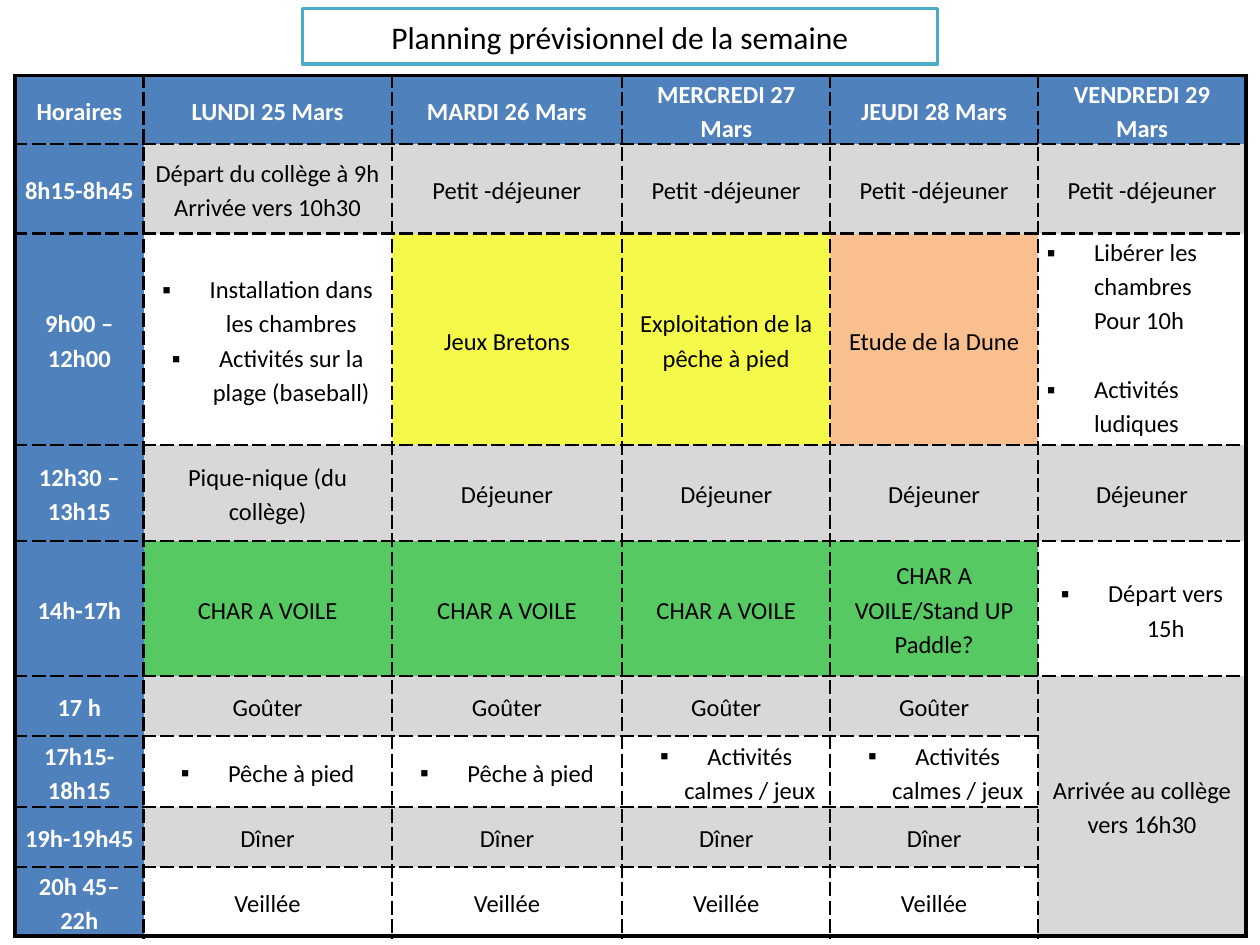
from lxml.etree import SubElement
from pptx import Presentation
from pptx.dml.color import RGBColor
from pptx.enum.text import MSO_ANCHOR as Anchor, PP_ALIGN as Align
from pptx.oxml.ns import qn
from pptx.util import Pt

COLORS = {
    "blue": "4F81BD", "grey": "D8D8D8", "yellow": "F5F949", "orange": "FABF8F",
    "green": "57C962", "teal": "4BACC6", "white": "FFFFFF", "black": "000000",
}
FONT = "Calibri"
TITLE_BOX = (172.8, 5, 362.9, 31.7)
PLANNING_BOX = (8.64, 43.2, 703.4, 491.8)
COLUMN_WIDTHS = [73.4, 141.8, 131.8] + [118.8] * 3
LINE = 19.5  # height of one line of text in a cell
HANGING = 27

DAYS = ["Horaires", "LUNDI 25 Mars", "MARDI 26 Mars", "MERCREDI 27 Mars",
        "JEUDI 28 Mars", "VENDREDI 29 Mars"]
# Each slot: height, hours, day entries, day fills; an entry in a list is bulleted
SLOTS = [
    (51.1, "8h15-8h45",
     ["Départ du collège à 9h\nArrivée vers 10h30"] + ["Petit -déjeuner"] * 4,
     ["grey"] * 5),
    (121, "9h00 – 12h00",
     [["Installation dans les chambres", "Activités sur la plage (baseball)"],
      "Jeux Bretons", "Exploitation de la pêche à pied", "Etude de la Dune",
      ["Libérer les chambres\vPour 10h", "Activités ludiques"]],
     [None, "yellow", "yellow", "orange", None]),
    (54.7, "12h30 – 13h15",
     ["Pique-nique (du collège)"] + ["Déjeuner"] * 4, ["grey"] * 5),
    (77, "14h-17h",
     ["CHAR A VOILE"] * 3 + ["CHAR A VOILE/Stand UP Paddle?", ["Départ vers 15h"]],
     ["green"] * 4 + [None]),
    (34.6, "17 h", ["Goûter"] * 4 + ["Arrivée au collège vers 16h30"], ["grey"] * 5),
    (40.3, "17h15-18h15",
     [["Pêche à pied"]] * 2 + [["Activités calmes / jeux"]] * 2, [None] * 4),
    (34.6, "19h-19h45", ["Dîner"] * 4, ["grey"] * 4),
    (34.6, "20h 45– 22h", ["Veillée"] * 4, [None] * 4),
]
MORNING, AFTERNOON, RETURN = 2, 4, 5  # table rows with a special Friday entry
FRIDAY = 5


def rgb(name):
    return RGBColor.from_string(COLORS[name])


def format_runs(paragraph, size, color, bold=False):
    for run in paragraph.runs:
        run.font.name = FONT
        run.font.size = Pt(size)
        run.font.bold = bold
        run.font.color.rgb = rgb(color)


def add_bullet(paragraph):
    props = paragraph._p.get_or_add_pPr()
    props.set("marL", str(Pt(HANGING)))
    props.set("indent", str(-Pt(HANGING)))
    SubElement(props, qn("a:buFont"), typeface=FONT)
    SubElement(props, qn("a:buChar"), char="▪")


def fill_cell(cell, entry, fill, heading=False):
    cell.vertical_anchor = Anchor.MIDDLE
    cell.margin_left = cell.margin_right = Pt(5)
    cell.margin_top = cell.margin_bottom = 0
    if fill:
        cell.fill.solid()
        cell.fill.fore_color.rgb = rgb(fill)
    else:
        cell.fill.background()
    bulleted = isinstance(entry, list)
    cell.text_frame.text = "\n".join(entry) if bulleted else entry
    for paragraph in cell.text_frame.paragraphs:
        paragraph.alignment = Align.CENTER
        paragraph.line_spacing = 1.15
        if bulleted:
            add_bullet(paragraph)
        format_runs(paragraph, 14, "white" if heading else "black", heading)


def set_borders(cell, edges):
    """edges maps L, R, T, B to True for the solid frame, False for inner dashes."""
    props = cell._tc.get_or_add_tcPr()
    sides = [side for side in "LRTB" if side in edges]
    for position, side in enumerate(sides):
        outer = edges[side]
        line = SubElement(props, qn(f"a:ln{side}"), w=str(Pt(2.25 if outer else 1.5)))
        solid = SubElement(line, qn("a:solidFill"))
        SubElement(solid, qn("a:srgbClr"), val=COLORS["black"])
        SubElement(line, qn("a:prstDash"), val="solid" if outer else "dash")
        props.insert(position, line)


def draw_grid(planning):
    last_row, last_column = len(planning.rows) - 1, len(planning.columns) - 1
    for r in range(last_row + 1):
        for c in range(last_column + 1):
            cell = planning.cell(r, c)
            height = cell.span_height if cell.is_merge_origin else 1
            edges = {"L": c == 0, "R": c == last_column,
                     "T": r == 0, "B": r + height - 1 == last_row}
            if cell.is_spanned:
                del edges["T"]
                if r < last_row:
                    del edges["B"]
            set_borders(cell, edges)


def build_title(slide, box):
    title = slide.shapes.title
    title.left, title.top, title.width, title.height = map(Pt, box)
    outline = SubElement(title._element.spPr, qn("a:prstGeom"), prst="roundRect")
    SubElement(outline, qn("a:avLst"))
    title.fill.solid()
    title.fill.fore_color.rgb = rgb("white")
    title.line.color.rgb = rgb("teal")
    title.line.width = Pt(2)
    title.text_frame.text = "Planning prévisionnel de la semaine"
    title.text_frame.vertical_anchor = Anchor.MIDDLE
    heading = title.text_frame.paragraphs[0]
    heading.alignment = Align.CENTER
    format_runs(heading, 18, "black")


def build_planning(slide, box):
    planning = slide.shapes.add_table(
        len(SLOTS) + 1, len(DAYS), *map(Pt, box)).table
    planning.first_row = planning.horz_banding = False
    for column, width in zip(planning.columns, COLUMN_WIDTHS):
        column.width = Pt(width)

    # Day headings
    planning.rows[0].height = Pt(38.9)
    for c, day in enumerate(DAYS):
        fill_cell(planning.cell(0, c), day, "blue", heading=True)

    # Time slots
    for r, (height, hours, entries, fills) in enumerate(SLOTS, start=1):
        planning.rows[r].height = Pt(height)
        fill_cell(planning.cell(r, 0), hours, "blue", heading=True)
        for c, (entry, fill) in enumerate(zip(entries, fills), start=1):
            fill_cell(planning.cell(r, c), entry, fill)

    # Friday: packing up, departure and return
    packing = planning.cell(MORNING, FRIDAY)
    packing.vertical_anchor = Anchor.TOP
    for paragraph in packing.text_frame.paragraphs:
        paragraph.alignment = Align.LEFT
    packing.text_frame.paragraphs[1].space_before = Pt(LINE)
    departure = planning.cell(AFTERNOON, FRIDAY)
    departure.vertical_anchor = Anchor.TOP
    departure.margin_top = Pt(LINE)
    planning.cell(RETURN, FRIDAY).merge(planning.cell(len(SLOTS), FRIDAY))

    draw_grid(planning)


def main():
    prs = Presentation()
    prs.slide_width, prs.slide_height = Pt(720), Pt(540)
    slide = prs.slides.add_slide(prs.slide_layouts[5])
    build_planning(slide, PLANNING_BOX)
    build_title(slide, TITLE_BOX)
    prs.save("out.pptx")


if __name__ == "__main__":
    main()
